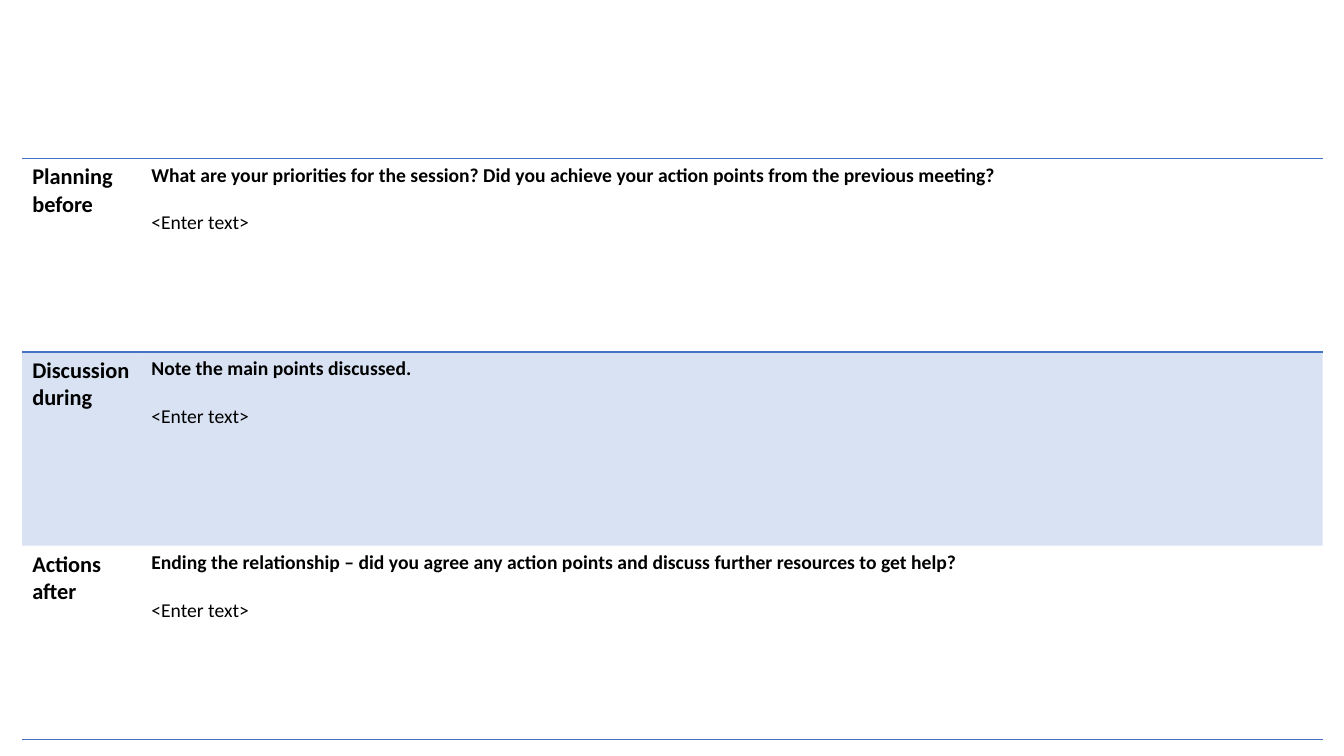
from dataclasses import dataclass

from lxml.etree import SubElement
from pptx import Presentation
from pptx.dml.color import RGBColor as RGB
from pptx.oxml.ns import qn
from pptx.util import Cm, Pt


@dataclass(frozen=True)
class Theme:
    font: str = "Calibri"
    text: str = "000000"
    accent: str = "4472C4"
    band_alpha: int = 20  # percent
    label: int = 16
    body: int = 14
    gap: int = 17
    rule: int = 1


THEME = Theme()
PLAIN_TABLE = "{2D5ABB26-0587-4C30-8999-92F81FD0307C}"
PROMPT = "<Enter text>"
STAGES = [
    ("Planning before", "What are your priorities for the session? "
     "Did you achieve your action points from the previous meeting?"),
    ("Discussion during", "Note the main points discussed."),
    ("Actions after", "Ending the relationship – did you agree any action points "
     "and discuss further resources to get help?"),
]


def format_text(p, size, bold):
    for r in p.runs:
        r.font.name = THEME.font
        r.font.size = Pt(size)
        r.font.bold = bold
        r.font.color.rgb = RGB.from_string(THEME.text)


def add_border(cell, side):
    ln = SubElement(cell._tc.get_or_add_tcPr(), qn(f"a:ln{side}"), w=str(Pt(THEME.rule)))
    fill = SubElement(ln, qn("a:solidFill"))
    SubElement(fill, qn("a:srgbClr"), val=THEME.accent)


def fill_band(cell):
    cell.fill.solid()
    cell.fill.fore_color.rgb = RGB.from_string(THEME.accent)
    color = cell._tc.tcPr.find(qn("a:solidFill")).find(qn("a:srgbClr"))
    SubElement(color, qn("a:alpha"), val=str(THEME.band_alpha * 1000))


def style_row(cells, sides, banded):
    for cell in cells:
        # Borders come before the fill in the cell properties
        for side in sides:
            add_border(cell, side)
        if banded:
            fill_band(cell)
        else:
            cell.fill.background()


def write_stage(cells, label, question):
    label_cell, notes_cell = cells
    label_cell.text_frame.text = label
    format_text(label_cell.text_frame.paragraphs[0], THEME.label, True)

    tf = notes_cell.text_frame
    tf.text = question
    format_text(tf.paragraphs[0], THEME.body, True)
    p = tf.add_paragraph()
    p.text = PROMPT
    p.space_before = Pt(THEME.gap)
    format_text(p, THEME.body, False)


def add_meeting_table(s, left, top, width, height, label_width):
    table = s.shapes.add_table(len(STAGES), 2, left, top, width, height).table
    table.first_row = table.horz_banding = False
    table._tbl.tblPr.find(qn("a:tableStyleId")).text = PLAIN_TABLE
    table.columns[0].width = label_width
    table.columns[1].width = width - label_width

    # Rules above and below the first row, and below the last
    borders = ["TB", "", "B"]
    for i, (label, question) in enumerate(STAGES):
        cells = [table.cell(i, col) for col in range(2)]
        write_stage(cells, label, question)
        style_row(cells, borders[i], banded=i % 2 == 1)


def main():
    prs = Presentation()
    prs.slide_width, prs.slide_height = Cm(33.87), Cm(19.05)
    s = prs.slides.add_slide(prs.slide_layouts[6])
    add_meeting_table(s, Cm(0.56), Cm(3.99), Cm(32.77), Cm(14.64), label_width=Cm(3))
    prs.save("out.pptx")


if __name__ == "__main__":
    main()
